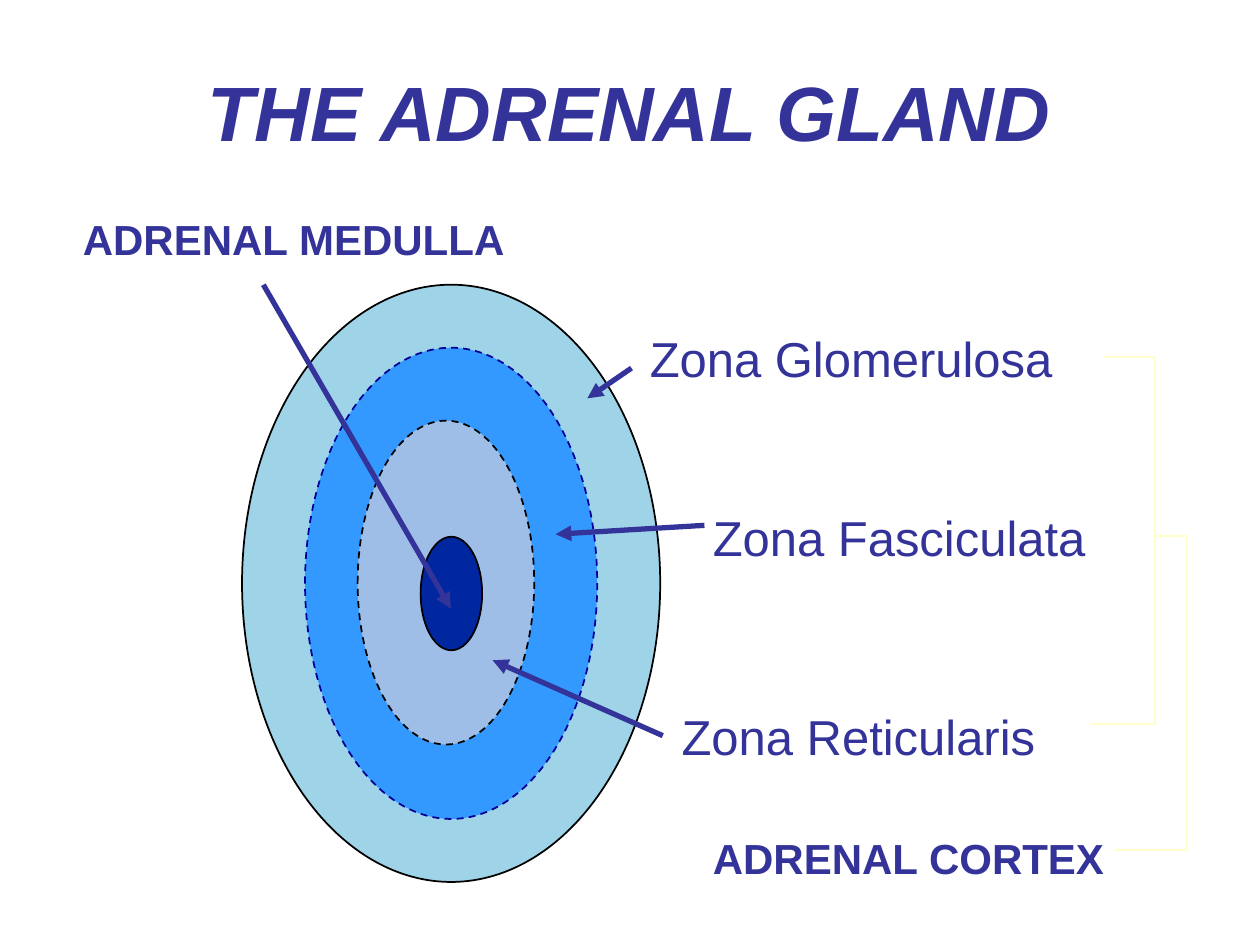
import pptx
import pptx.dml.color
import pptx.enum.dml
import pptx.enum.shapes
import pptx.enum.text
import pptx.oxml.ns
import pptx.util
from lxml import etree
from pptx.util import Cm

INDIGO = "333399"
CREAM = "FFFFCC"

# left, top, width, height, fill, outline, dashed; from the outside in
LAYERS = [
    (4.88, 5.74, 8.43, 12.04, "9ED3E8", "000000", False),
    (6.15, 7.01, 5.89, 9.5, "3399FF", "000099", True),
    (7.21, 8.48, 3.56, 6.53, "9FBEE7", "000000", True),
    (8.48, 10.82, 1.24, 2.29, "00279F", "000000", False),
]

# text, left, top, width
REGIONS = [
    ("ADRENAL MEDULLA", 1.42, 4.17, 9.09),
    ("ADRENAL CORTEX", 14.12, 16.66, 8.48),
]
ZONES = [
    ("Zona Glomerulosa", 12.85, 6.5, 8.74),
    ("Zona Fasciculata", 14.12, 10.11, 8.36),
    ("Zona Reticularis", 13.49, 14.12, 7.72),
]

# start x, start y, end x, end y
ARROWS = [
    (5.31, 5.74, 9.09, 12.27),
    (12.73, 7.42, 11.84, 8.03),
    (14.2, 10.59, 11.2, 10.77),
    (13.36, 14.83, 9.93, 13.31),
]

ZONE_BRACKET_X, CORTEX_BRACKET_X = 23.28, 23.92
ZONE_TOP, ZONE_MIDDLE, ZONE_BOTTOM, CORTEX_Y = 7.19, 10.8, 14.6, 17.14
BRACKETS = [
    (22.25, ZONE_TOP, ZONE_BRACKET_X, ZONE_TOP),
    (22.02, ZONE_BOTTOM, ZONE_BRACKET_X, ZONE_BOTTOM),
    (ZONE_BRACKET_X, ZONE_TOP, ZONE_BRACKET_X, ZONE_BOTTOM),
    (ZONE_BRACKET_X, ZONE_MIDDLE, CORTEX_BRACKET_X, ZONE_MIDDLE),
    (CORTEX_BRACKET_X, ZONE_MIDDLE, CORTEX_BRACKET_X, CORTEX_Y),
    (22.45, CORTEX_Y, CORTEX_BRACKET_X, CORTEX_Y),
]


def color(hex_string):
    return pptx.dml.color.RGBColor.from_string(hex_string)


def add_text(slide, text, left, top, width, height, size, bold=False):
    box = slide.shapes.add_textbox(Cm(left), Cm(top), Cm(width), Cm(height))
    box.text_frame.word_wrap = False
    paragraph = box.text_frame.paragraphs[0]
    paragraph.text = text
    paragraph.font.name = "Arial"
    paragraph.font.size = pptx.util.Pt(size)
    paragraph.font.bold = bold
    paragraph.font.color.rgb = color(INDIGO)
    return box


def add_title(slide, text):
    box = add_text(slide, text, 1.9, 0.64, 21.59, 3.18, 44, bold=True)
    box.text_frame.word_wrap = True
    box.text_frame.vertical_anchor = pptx.enum.text.MSO_ANCHOR.MIDDLE
    paragraph = box.text_frame.paragraphs[0]
    paragraph.alignment = pptx.enum.text.PP_ALIGN.CENTER
    paragraph.font.italic = True


def add_layer(slide, left, top, width, height, fill, outline, dashed):
    ellipse = slide.shapes.add_shape(
        pptx.enum.shapes.MSO_SHAPE.OVAL,
        Cm(left), Cm(top), Cm(width), Cm(height))
    ellipse.shadow.inherit = False
    ellipse.fill.solid()
    ellipse.fill.fore_color.rgb = color(fill)
    ellipse.line.color.rgb = color(outline)
    ellipse.line.width = pptx.util.Pt(1)
    if dashed:
        ellipse.line.dash_style = pptx.enum.dml.MSO_LINE.DASH


def add_line(slide, start_x, start_y, end_x, end_y, line_color, width):
    connector = slide.shapes.add_connector(
        pptx.enum.shapes.MSO_CONNECTOR.STRAIGHT,
        Cm(start_x), Cm(start_y), Cm(end_x), Cm(end_y))
    connector.line.color.rgb = color(line_color)
    connector.line.width = pptx.util.Pt(width)
    etree.SubElement(connector._element.spPr,
                     pptx.oxml.ns.qn("a:effectLst"))
    return connector


def add_arrow(slide, *ends):
    connector = add_line(slide, *ends, INDIGO, 3)
    etree.SubElement(connector.line._get_or_add_ln(),
                     pptx.oxml.ns.qn("a:tailEnd"), type="triangle")


def main():
    presentation = pptx.Presentation()
    presentation.slide_width = Cm(25.4)
    presentation.slide_height = Cm(19.05)
    slide = presentation.slides.add_slide(presentation.slide_layouts[6])

    add_title(slide, "THE ADRENAL GLAND")
    for layer in LAYERS:
        add_layer(slide, *layer)
    for region in REGIONS:
        add_text(slide, *region, height=1.27, size=24, bold=True)
    for zone in ZONES:
        add_text(slide, *zone, height=1.45, size=28)
    for ends in BRACKETS:
        add_line(slide, *ends, CREAM, 1)
    for ends in ARROWS:
        add_arrow(slide, *ends)

    presentation.save("out.pptx")


if __name__ == "__main__":
    main()
